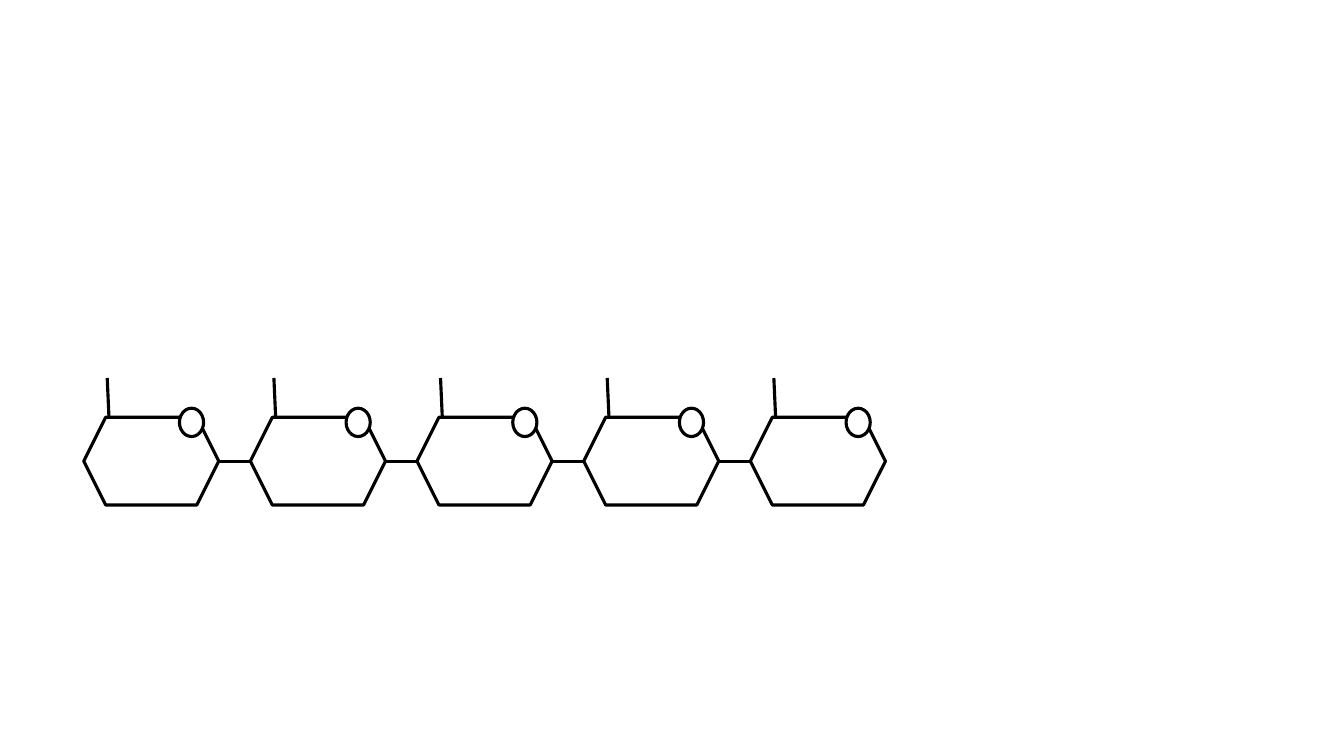
from pptx import Presentation
from pptx.dml.color import RGBColor
from pptx.enum.shapes import MSO_CONNECTOR, MSO_SHAPE
from pptx.oxml.ns import qn
from pptx.util import Inches, Pt
from lxml.etree import SubElement

BLACK = RGBColor(0, 0, 0)
WHITE = RGBColor(255, 255, 255)

# Grid of 100 columns by 100 rows
RING_COUNT = 5
FIRST_RING, RING_PITCH = 6.23, 12.4
RING_TOP, RING_WIDTH, RING_HEIGHT = 55.2, 10.05, 11.6
BOND_ROW = RING_TOP + RING_HEIGHT / 2


class ChainSlide:
    """Draws the parts of a sugar chain on one slide."""

    def __init__(self, prs):
        self.slide = prs.slides.add_slide(prs.slide_layouts[6])
        self.column = prs.slide_width / 100
        self.row = prs.slide_height / 100
        self.stroke = {"width": Pt(2.25)}

    def x(self, columns):
        return round(columns * self.column)

    def y(self, rows):
        return round(rows * self.row)

    def outline(self, part):
        part.line.color.rgb = BLACK
        for name, value in self.stroke.items():
            setattr(part.line, name, value)

    def bond(self, shapes, start, end):
        bond = shapes.add_connector(
            MSO_CONNECTOR.STRAIGHT,
            self.x(start[0]), self.y(start[1]), self.x(end[0]), self.y(end[1]))
        self.outline(bond)
        SubElement(bond.element.spPr, qn("a:effectLst"))

    def outlined(self, shapes, kind, left, top, width, height, fill=None):
        part = shapes.add_shape(
            kind, self.x(left), self.y(top), self.x(width), self.y(height))
        part.shadow.inherit = False
        if fill is None:
            part.fill.background()
        else:
            part.fill.solid()
            part.fill.fore_color.rgb = fill
        self.outline(part)

    def sugar(self, left):
        """A ring with its side chain, grouped."""
        sugar = self.slide.shapes.add_group_shape().shapes
        self.outlined(sugar, MSO_SHAPE.HEXAGON,
                      left, RING_TOP, RING_WIDTH, RING_HEIGHT)
        self.bond(sugar, (left + 1.75, 50), (left + 1.88, RING_TOP))

    def oxygen(self, left):
        self.outlined(self.slide.shapes, MSO_SHAPE.OVAL,
                      left + 7.12, 54, 1.8, 3.75, WHITE)


def main():
    prs = Presentation()
    prs.slide_width, prs.slide_height = Inches(13.33), Inches(7.5)
    chain = ChainSlide(prs)
    lefts = [FIRST_RING + i * RING_PITCH for i in range(RING_COUNT)]

    # Rings with side chains
    for left in lefts:
        chain.sugar(left)

    # Bonds between neighbouring rings
    for left, following in zip(lefts, lefts[1:]):
        chain.bond(chain.slide.shapes,
                   (left + RING_WIDTH, BOND_ROW), (following, BOND_ROW))

    # Oxygen atoms in front of the rings
    for left in lefts:
        chain.oxygen(left)

    prs.save("out.pptx")


if __name__ == "__main__":
    main()
